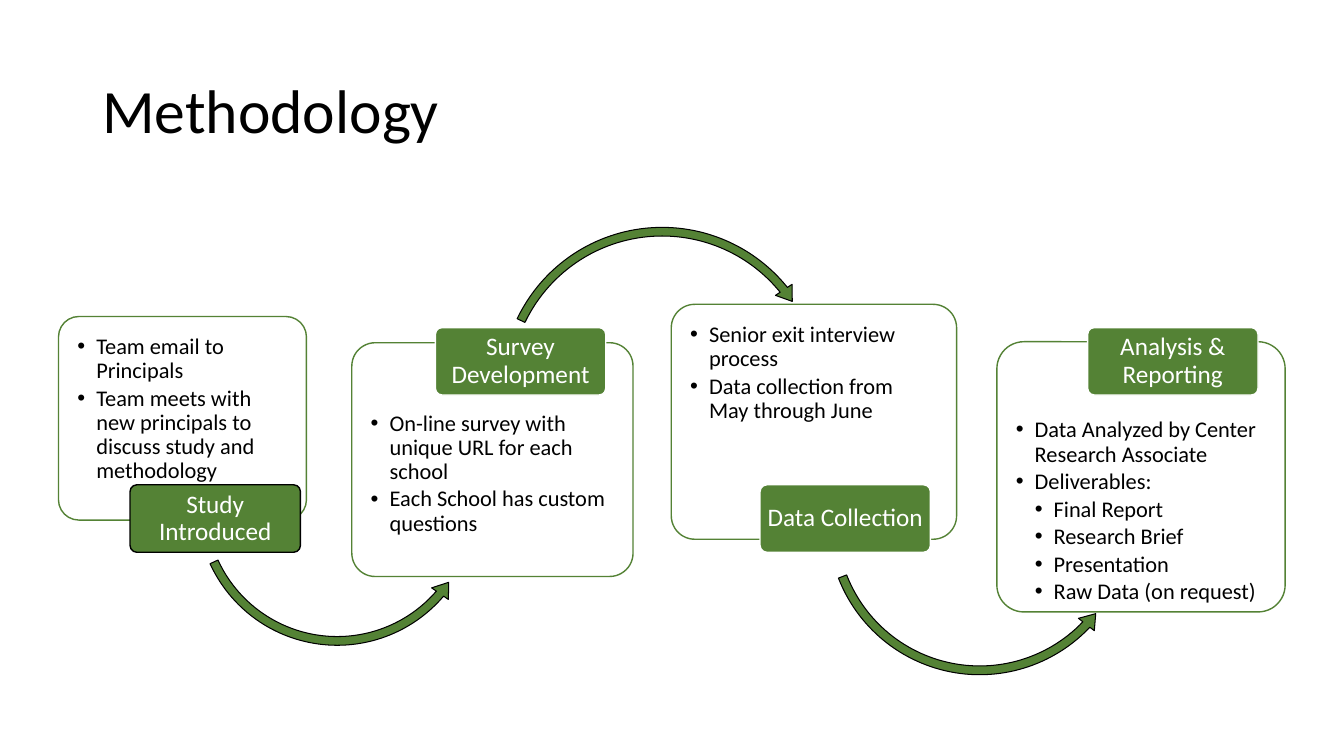
from lxml import etree
from pptx import Presentation
from pptx.dml.color import RGBColor
from pptx.enum.shapes import MSO_SHAPE as SHAPE
from pptx.enum.text import MSO_ANCHOR as ANCHOR, PP_ALIGN as ALIGN
from pptx.oxml.ns import qn
from pptx.util import Pt

# Content: card and arrow boxes are (left, top, width, height) in points
TITLE = "Methodology"
STEPS = [
    dict(tag="Study Introduced", tag_at=(92.9, 346.3), tag_line="black",
         card=(41.8, 226.1, 177.1, 145.4), text_low=False,
         bullets=[(0, "Team email to Principals"),
                  (0, "Team meets with new principals to discuss study and methodology")],
         arrow=(SHAPE.LEFT_CIRCULAR_ARROW, (136.8, 257, 208.1, 208.1),
                (0.03, 3.639, 24.38, 93.231, 0.035))),
    dict(tag="Survey Development", tag_at=(311, 234), tag_line="white",
         card=(251.3, 244.8, 200.9, 167), text_low=True,
         bullets=[(0, "On-line survey with unique URL for each school"),
                  (0, "Each School has custom questions")],
         arrow=(SHAPE.CIRCULAR_ARROW, (354.2, 158.4, 237.6, 237.6),
                (0.026, 3.16, 192.659, 123.329, 0.03))),
    dict(tag="Data Collection", tag_at=(542.9, 346.3), tag_line="white",
         card=(479.5, 217.4, 203.8, 167.8), text_low=False,
         bullets=[(0, "Senior exit interview process"),
                  (0, "Data collection from May through June")],
         arrow=(SHAPE.LEFT_CIRCULAR_ARROW, (587.5, 261.4, 224.6, 224.6),
                (0.028, 3.354, 26.116, 95.252, 0.032))),
    dict(tag="Analysis & Reporting", tag_at=(776.9, 234), tag_line="white",
         card=(712.1, 244.1, 205.9, 193), text_low=True,
         bullets=[(0, "Data Analyzed by Center Research Associate"),
                  (0, "Deliverables:"),
                  (1, "Final Report"), (1, "Research Brief"),
                  (1, "Presentation"), (1, "Raw Data (on request)")],
         arrow=None),
]

THEME = dict(
    font="Calibri", title=44, tag=18, body=16,
    green=RGBColor(0x54, 0x82, 0x35), black=RGBColor(0, 0, 0),
    white=RGBColor(255, 255, 255),
)
TAG_SIZE = (121.7, 48.2)
CORNER = 0.1          # corner radius as a share of the shorter side
TEXT_PAD = 13.5       # card edge to text
LOW_SHARE = 3 / 14    # part of a card kept free above low text
INDENT = 13.5         # hanging indent per bullet level


def add_text(s, lines, *, size, color, align=ALIGN.LEFT, anchor=ANCHOR.TOP,
             insets=(7.2, 3.6, 7.2, 3.6), after=0, bullet=None):
    """Fill a shape with (level, text) lines."""
    tf = s.text_frame
    tf.word_wrap = True
    tf.vertical_anchor = anchor
    (tf.margin_left, tf.margin_top,
     tf.margin_right, tf.margin_bottom) = [Pt(v) for v in insets]
    for i, (level, text) in enumerate(lines):
        p = tf.paragraphs[0] if i == 0 else tf.add_paragraph()
        p.alignment, p.line_spacing, p.space_after = align, 0.9, Pt(after)
        r = p.add_run()
        r.text = text
        r.font.name, r.font.size = THEME["font"], Pt(size)
        r.font.color.rgb = THEME[color]
        if bullet:
            p.level = level
            pPr = p._p.get_or_add_pPr()
            pPr.set("marL", str(Pt(INDENT * (level + 1))))
            pPr.set("indent", str(Pt(-INDENT)))
            etree.SubElement(pPr, qn("a:buFont"), typeface="Arial")
            etree.SubElement(pPr, qn("a:buChar"), char=bullet)


def add_shape(kind, box, *, fill, line, width, adjust, alpha=None):
    s = slide.shapes.add_shape(kind, *[Pt(v) for v in box])
    s.shadow.inherit = False
    s.fill.solid()
    s.fill.fore_color.rgb = THEME[fill]
    s.line.color.rgb = THEME[line]
    s.line.width = Pt(width)
    for i, value in enumerate(adjust):
        s.adjustments[i] = value
    if alpha:
        color = s._element.spPr.find(qn("a:solidFill"))[0]
        etree.SubElement(color, qn("a:alpha"), val=str(alpha * 1000))
    return s


def add_card(step):
    x, y, w, h = step["card"]
    s = add_shape(SHAPE.ROUNDED_RECTANGLE, step["card"], fill="white",
                  line="green", width=1, adjust=[CORNER], alpha=90)
    # A rounded rectangle already insets its text by 0.29 of the radius
    side = TEXT_PAD - 0.29 * CORNER * min(w, h)
    top = side + (h * LOW_SHARE if step["text_low"] else 0)
    add_text(s, step["bullets"], size=THEME["body"], color="black",
             insets=(side, top, side, 0), after=2.4, bullet="•")


def add_tag(step):
    s = add_shape(SHAPE.ROUNDED_RECTANGLE, step["tag_at"] + TAG_SIZE, fill="green",
                  line=step["tag_line"], width=1, adjust=[CORNER])
    add_text(s, [(0, step["tag"])], size=THEME["tag"], color="white",
             align=ALIGN.CENTER, anchor=ANCHOR.MIDDLE, insets=(2.9, 2.2, 2.9, 2.2))


prs = Presentation()
prs.slide_width, prs.slide_height = Pt(960), Pt(540)
slide = prs.slides.add_slide(prs.slide_layouts[6])

# Title
title = slide.shapes.add_textbox(Pt(66), Pt(28.75), Pt(828), Pt(104.4))
add_text(title, [(0, TITLE)], size=THEME["title"], color="black", anchor=ANCHOR.MIDDLE)

# Steps: card, arrow to the next step, tag on top
for step in STEPS:
    add_card(step)
    if step["arrow"]:
        kind, box, adjust = step["arrow"]
        add_shape(kind, box, fill="green", line="black", width=0.75, adjust=adjust)
    add_tag(step)

prs.save("out.pptx")
